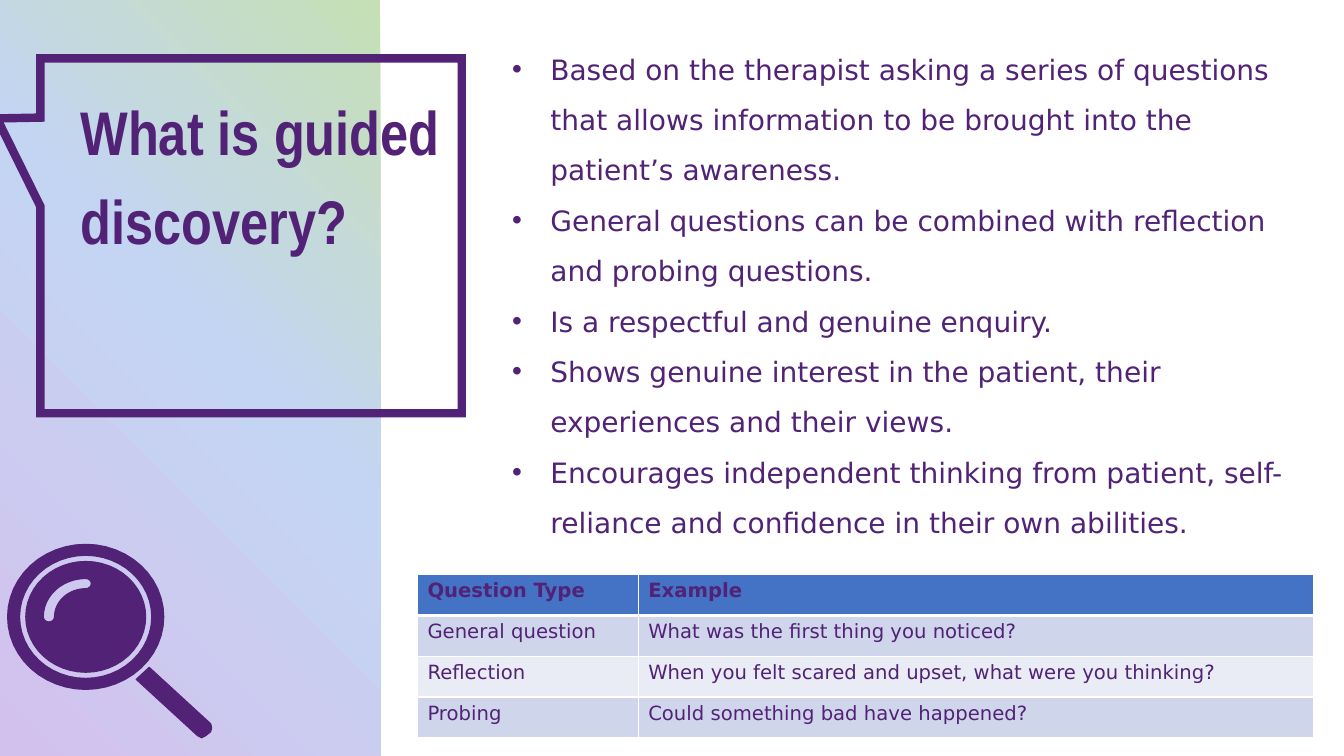
from math import cos, radians, sin

from lxml import etree
from pptx import Presentation
from pptx.dml.color import RGBColor
from pptx.enum.shapes import MSO_SHAPE as Shape
from pptx.oxml import parse_xml
from pptx.oxml.ns import nsdecls, qn
from pptx.util import Inches, Pt

TITLE = "What is guided discovery?"
POINTS = [
    "Based on the therapist asking a series of questions that allows information "
    "to be brought into the patient’s awareness.",
    "General questions can be combined with reflection and probing questions.",
    "Is a respectful and genuine enquiry.",
    "Shows genuine interest in the patient, their experiences and their views.",
    "Encourages independent thinking from patient, self-reliance and confidence "
    "in their own abilities.",
]
QUESTIONS = [
    ("Question Type", "Example"),
    ("General question", "What was the first thing you noticed?"),
    ("Reflection", "When you felt scared and upset, what were you thinking?"),
    ("Probing", "Could something bad have happened?"),
]
COLORS = {
    "purple": "512275", "white": "FFFFFF", "header": "4472C4",
    "odd": "CFD5EA", "even": "E9EBF5",
}
PANEL_STOPS = [(0, "D3C1ED"), (56, "C4D5F3"), (100, "C5E0B4")]
TITLE_FONT, BODY_FONT = "Arial Narrow", "DejaVu Sans"

WIDTH, HEIGHT = 13.33, 7.5
PANEL_WIDTH = 3.77
COLUMN_WIDTHS, ROW_HEIGHT = (2.19, 6.7), 0.405
LENS = (0.85, 6.12)
HANDLE = [(1.48, 6.62), (1.35, 6.74), (1.96, 7.3), (2, 7.32), (2.04, 7.3),
          (2.09, 7.26), (2.1, 7.22), (2.09, 7.18)]


def color(name):
    return RGBColor.from_string(COLORS[name])


def arc(center, radii, start=0, end=360, steps=48):
    """Points along an ellipse, in degrees clockwise from the right."""
    angles = [radians(start + (end - start) * i / steps) for i in range(steps + 1)]
    return [(center[0] + radii[0] * cos(a), center[1] + radii[1] * sin(a))
            for a in angles]


def add_outline(page, *contours):
    """Draw one purple shape; inner contours become holes."""
    contours = [[(Inches(x), Inches(y)) for x, y in contour] for contour in contours]
    builder = page.shapes.build_freeform(*contours[0][0])
    for number, contour in enumerate(contours):
        if number:
            builder.move_to(*contour[0])
        builder.add_line_segments(contour[1:], close=True)
    shape = builder.convert_to_shape()
    shape.shadow.inherit = False
    shape.fill.solid()
    shape.fill.fore_color.rgb = color("purple")
    shape.line.color.rgb = color("purple")
    shape.line.width = Pt(0.75)


def style_text(para, font, size, bold=False):
    for span in para.runs:
        span.font.name = font
        span.font.size = Pt(size)
        span.font.bold = bold
        span.font.color.rgb = color("purple")


def add_panel(page):
    panel = page.shapes.add_shape(Shape.RECTANGLE, 0, 0, Inches(PANEL_WIDTH), Inches(HEIGHT))
    panel.shadow.inherit = False
    panel.line.fill.background()
    stops = "".join(f'<a:gs pos="{share * 1000}"><a:srgbClr val="{value}"/></a:gs>'
                    for share, value in PANEL_STOPS)
    gradient = parse_xml(
        f'<a:gradFill {nsdecls("a")} rotWithShape="1"><a:gsLst>{stops}</a:gsLst>'
        '<a:path path="circle"><a:fillToRect t="100000" r="100000"/></a:path></a:gradFill>')
    panel._element.spPr.find(qn("a:prstGeom")).addnext(gradient)


def add_title(page):
    callout = page.shapes.add_shape(Shape.RECTANGULAR_CALLOUT, Inches(0.4), Inches(0.58),
                                    Inches(4.18), Inches(3.52))
    callout.adjustments[0], callout.adjustments[1] = -0.603, -0.331
    callout.shadow.inherit = False
    callout.fill.background()
    callout.line.color.rgb = color("purple")
    callout.line.width = Pt(6)
    line = callout._element.spPr.find(qn("a:ln"))
    etree.SubElement(line, qn("a:miter")).set("lim", "800000")

    box = page.shapes.add_textbox(Inches(0.51), Inches(0.74), Inches(4.09), Inches(1.79))
    box.text_frame.word_wrap = True
    box.text_frame.text = TITLE
    para = box.text_frame.paragraphs[0]
    para.line_spacing = 1.2
    para._p.get_or_add_pPr().set("marL", str(Inches(0.19)))
    style_text(para, TITLE_FONT, 44, bold=True)


def add_magnifier(page):
    add_outline(page, arc(LENS, (0.775, 0.72)), arc(LENS, (0.655, 0.61)))
    cap = (0.055, 0.05)
    glint = (arc(LENS, (0.42, 0.38), 180, 270, 12)
             + arc((LENS[0], LENS[1] - 0.33), cap, 270, 450, 8)
             + arc(LENS, (0.31, 0.28), 270, 180, 12)
             + arc((LENS[0] - 0.365, LENS[1]), cap, 0, 180, 8))
    add_outline(page, arc(LENS, (0.595, 0.55)), glint)
    add_outline(page, HANDLE)


def add_points(page):
    box = page.shapes.add_textbox(Inches(4.98), Inches(0.3), Inches(7.92), Inches(5.65))
    frame = box.text_frame
    frame.word_wrap = True
    frame.text = "\n".join(POINTS)
    for para in frame.paragraphs:
        para.line_spacing = 1.5
        style_text(para, BODY_FONT, 20)
        props = para._p.get_or_add_pPr()
        props.set("marL", str(Inches(0.38)))
        props.set("indent", str(-Inches(0.38)))
        etree.SubElement(props, qn("a:buFont")).set("typeface", "Arial")
        etree.SubElement(props, qn("a:buChar")).set("char", "•")


def add_borders(cell, row):
    widths = {"L": 1, "R": 1, "T": 3 if row == 1 else 1, "B": 3 if row == 0 else 1}
    for side, points in widths.items():
        cell._tc.get_or_add_tcPr().append(parse_xml(
            f'<a:ln{side} {nsdecls("a")} w="{Pt(points)}"><a:solidFill>'
            f'<a:srgbClr val="{COLORS["white"]}"/></a:solidFill></a:ln{side}>'))


def add_questions(page):
    table = page.shapes.add_table(
        len(QUESTIONS), len(COLUMN_WIDTHS), Inches(4.14), Inches(5.7),
        Inches(sum(COLUMN_WIDTHS)), Inches(ROW_HEIGHT * len(QUESTIONS))).table
    for column, width in zip(table.columns, COLUMN_WIDTHS):
        column.width = Inches(width)
    for r, texts in enumerate(QUESTIONS):
        table.rows[r].height = Inches(ROW_HEIGHT)
        for c, text in enumerate(texts):
            cell = table.cell(r, c)
            cell.text_frame.text = text
            style_text(cell.text_frame.paragraphs[0], BODY_FONT, 14, bold=r == 0)
            add_borders(cell, r)
            cell.fill.solid()
            cell.fill.fore_color.rgb = color("header" if r == 0 else "odd" if r % 2 else "even")


def main():
    deck = Presentation()
    deck.slide_width, deck.slide_height = Inches(WIDTH), Inches(HEIGHT)
    page = deck.slides.add_slide(deck.slide_layouts[6])
    for add_part in (add_panel, add_title, add_magnifier, add_points, add_questions):
        add_part(page)
    deck.save("out.pptx")


if __name__ == "__main__":
    main()
